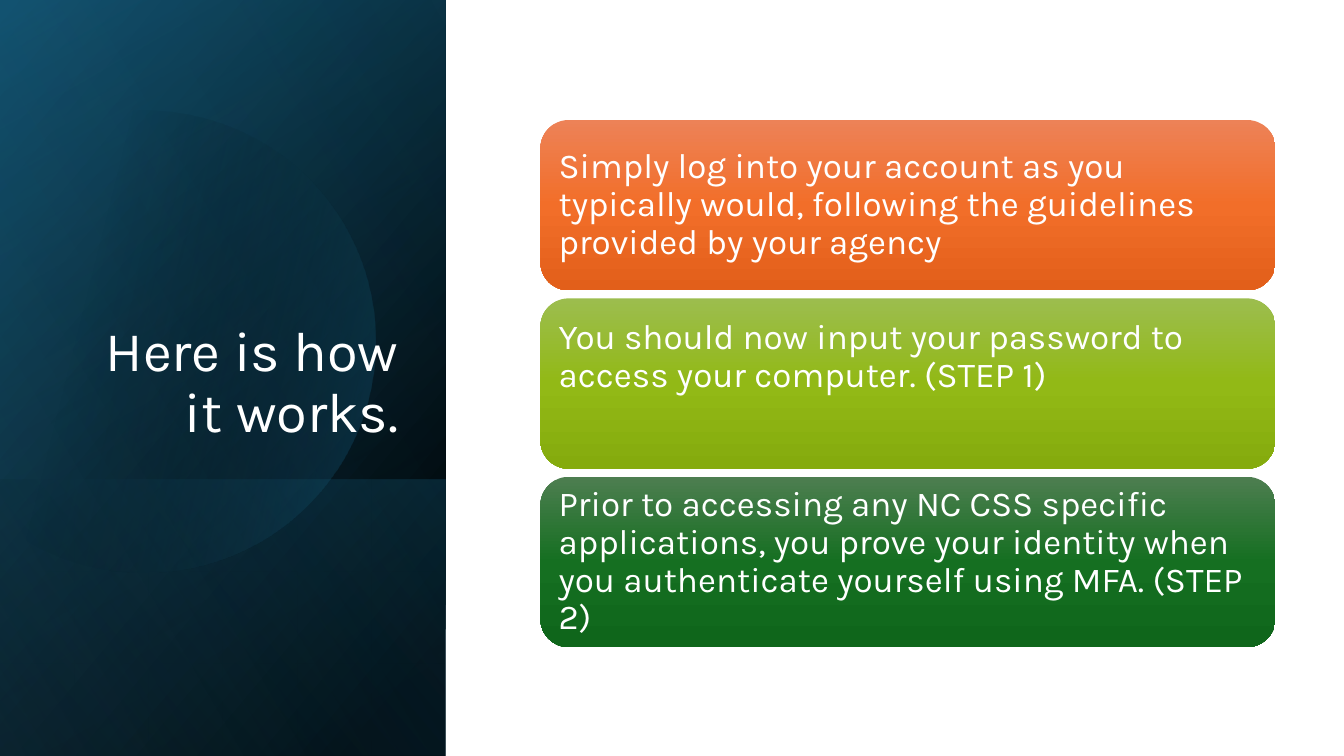
from math import acos, cos, sin

from lxml.etree import SubElement
from pptx import Presentation
from pptx.dml.color import RGBColor
from pptx.enum.shapes import MSO_SHAPE
from pptx.enum.text import MSO_ANCHOR, PP_ALIGN
from pptx.oxml.ns import qn
from pptx.util import Inches, Pt

FONT = "Karla"
WHITE = RGBColor(0xFF, 0xFF, 0xFF)
BLACK = RGBColor(0x00, 0x00, 0x00)
DEEP_TEAL = RGBColor(0x10, 0x48, 0x62)
TEAL = RGBColor(0x15, 0x60, 0x82)
SKY = RGBColor(0x46, 0xB1, 0xE1)
ORANGES = (RGBColor(0xED, 0x82, 0x57), RGBColor(0xF2, 0x6E, 0x29), RGBColor(0xE2, 0x5F, 0x1A))
LIMES = (RGBColor(0x9C, 0xBD, 0x4E), RGBColor(0x92, 0xB9, 0x16), RGBColor(0x85, 0xAB, 0x0D))
GREENS = (RGBColor(0x4D, 0x7E, 0x50), RGBColor(0x15, 0x6F, 0x21), RGBColor(0x0F, 0x66, 0x1B))

PANEL_WIDTH = 4.42
CARD_LEFT, CARD_TOP, CARD_WIDTH, CARD_HEIGHT, CARD_PITCH = 5.36, 1.19, 7.29, 1.69, 1.77

# Text, gradient colours, bottom inset
STEPS = [
    ("Simply log into your account as you typically would, following the "
     "guidelines provided by your agency", ORANGES, 0.1),
    ("You should now input your password to access your computer. (STEP 1)", LIMES, 0.62),
    ("Prior to accessing any NC CSS specific applications, you prove your identity "
     "when you authenticate yourself using MFA. (STEP 2)", GREENS, 0.1),
]


def set_all(target, values):
    for name, value in values.items():
        setattr(target, name, value)


def paint_gradient(shape, stops, angle):
    """Fill with (position %, colour, opacity %) stops, angle clockwise in degrees."""
    shape.shadow.inherit = False
    shape.line.fill.background()
    shape.fill.background()
    placeholder_fill = shape.element.spPr.find(qn("a:noFill"))
    gradient = placeholder_fill.makeelement(qn("a:gradFill"), {"rotWithShape": "1"})
    stop_list = SubElement(gradient, qn("a:gsLst"))
    for position, colour, opacity in stops:
        stop = SubElement(stop_list, qn("a:gs"), pos=str(position * 1000))
        tint = SubElement(stop, qn("a:srgbClr"), val=str(colour))
        if opacity < 100:
            SubElement(tint, qn("a:alpha"), val=str(opacity * 1000))
    SubElement(gradient, qn("a:lin"), ang=str(angle * 60000), scaled="0")
    shape.element.spPr.replace(placeholder_fill, gradient)


def add_panel_layer(slide, top, height, stops, angle):
    """Add a mirrored quarter-turned rectangle that covers the left panel from top."""
    layer = slide.shapes.add_shape(
        MSO_SHAPE.RECTANGLE,
        Inches((PANEL_WIDTH - height) / 2), Inches(top + (height - PANEL_WIDTH) / 2),
        Inches(height), Inches(PANEL_WIDTH))
    layer.rotation = 90
    layer.element.spPr.xfrm.set("flipH", "1")
    paint_gradient(layer, stops, angle)


def add_cut_disc(slide, centre_x, centre_y, radius, cut_x, stops, angle, steps=120):
    """Add a disc whose left side is cut off by the vertical line at cut_x."""
    end = acos((cut_x - centre_x) / radius)
    turns = [end * (2 * i / steps - 1) for i in range(steps + 1)]
    rim = [(Inches(centre_x + radius * cos(t)), Inches(centre_y + radius * sin(t)))
           for t in turns]
    builder = slide.shapes.build_freeform(*rim[0])
    builder.add_line_segments(rim[1:], close=True)
    paint_gradient(builder.convert_to_shape(), stops, angle)


def write_text(frame, text, size, alignment, frame_format):
    set_all(frame, {"word_wrap": True, **frame_format})
    frame.text = text
    paragraph = frame.paragraphs[0]
    set_all(paragraph, {"alignment": alignment, "line_spacing": 0.9})
    set_all(paragraph.runs[0].font, {"name": FONT, "size": Pt(size)})
    paragraph.runs[0].font.color.rgb = WHITE


def place_title(slide, text):
    title = slide.shapes.title
    set_all(title, {"left": Inches(0.64), "top": Inches(1.84),
                    "width": Inches(3.41), "height": Inches(2.62)})
    write_text(title.text_frame, text, 40, PP_ALIGN.RIGHT,
               {"vertical_anchor": MSO_ANCHOR.BOTTOM})
    title.element.getparent().append(title.element)  # in front of the panel


def add_step_card(slide, index, text, colours, bottom_inset):
    card = slide.shapes.add_shape(
        MSO_SHAPE.ROUNDED_RECTANGLE,
        Inches(CARD_LEFT), Inches(CARD_TOP + index * CARD_PITCH),
        Inches(CARD_WIDTH), Inches(CARD_HEIGHT))
    paint_gradient(card, [(i * 50, colour, 100) for i, colour in enumerate(colours)], 90)
    inset = Inches(0.1)
    write_text(card.text_frame, text, 25, PP_ALIGN.LEFT, {
        "vertical_anchor": MSO_ANCHOR.MIDDLE, "margin_left": inset, "margin_right": inset,
        "margin_top": inset, "margin_bottom": Inches(bottom_inset)})


def main():
    deck = Presentation()
    set_all(deck, {"slide_width": Inches(13.33), "slide_height": Inches(7.5)})
    slide = deck.slides.add_slide(deck.slide_layouts[5])

    add_panel_layer(slide, 0, 7.5, [(8, BLACK, 100), (100, DEEP_TEAL, 100)], 50)
    add_panel_layer(slide, 0, 7.5, [(0, BLACK, 0), (99, TEAL, 46)], 30)
    add_panel_layer(slide, 4.76, 2.74, [(2, TEAL, 29), (100, BLACK, 30)], 130)
    add_cut_disc(slide, 1.43, 3.39, 2.29, -0.15, [(29, BLACK, 0), (100, TEAL, 43)], 14)
    add_panel_layer(slide, 0, 7.5, [(0, BLACK, 0), (99, SKY, 11)], 120)

    place_title(slide, "Here is how it works.")
    for index, step in enumerate(STEPS):
        add_step_card(slide, index, *step)

    deck.save("out.pptx")


if __name__ == "__main__":
    main()
